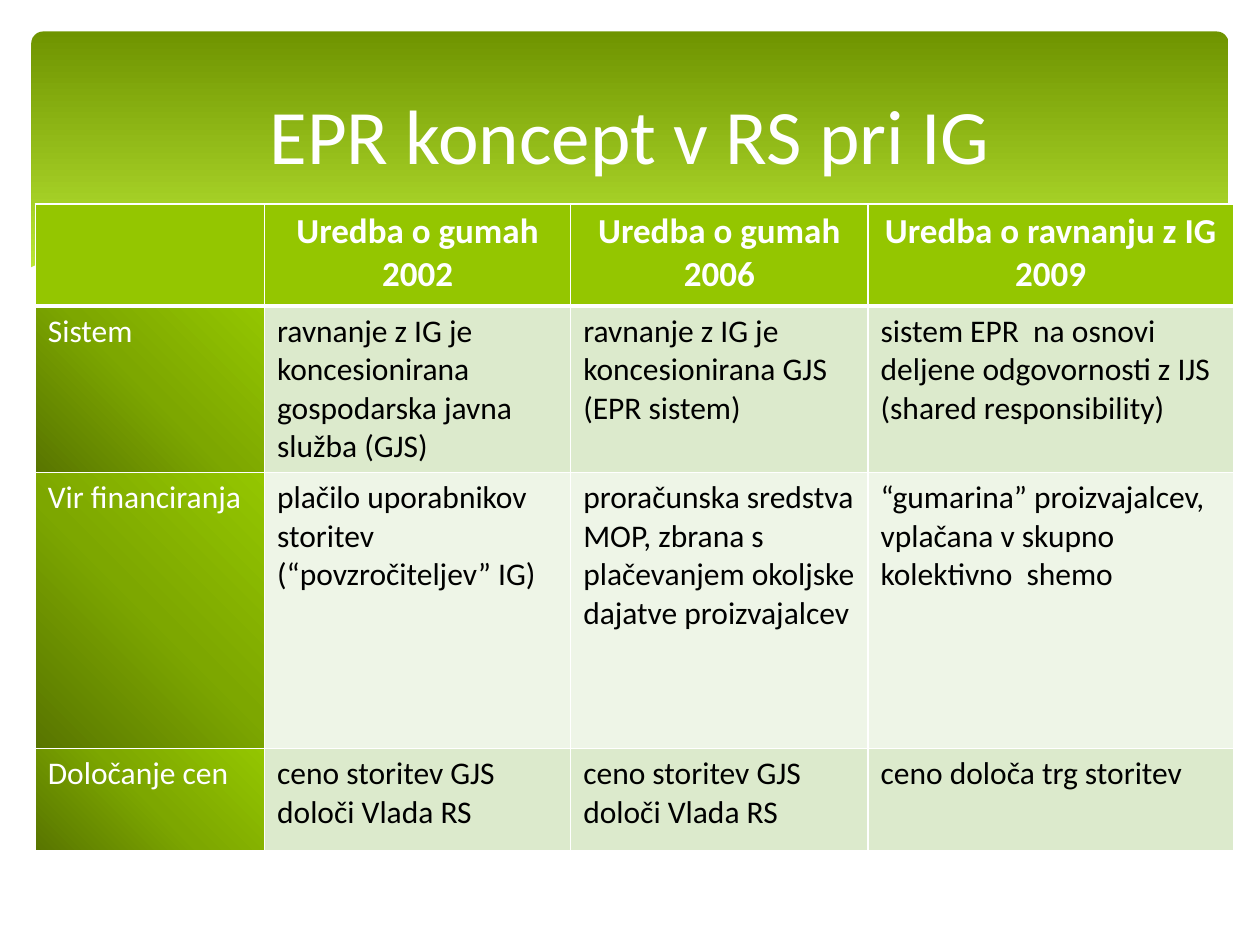
from lxml import etree
from pptx import Presentation
from pptx import util as u
from pptx.dml.color import RGBColor
from pptx.enum import shapes, text
from pptx.oxml.ns import qn

THEME = {
    "font": "Calibri", "title": 44, "head": 20, "body": 18,
    "white": "FFFFFF", "black": "000000", "green": "94C600", "mist": "CAF278",
    "bands": ["DCEACC", "EEF5E7"],
    "banner": [(0, "6F9400"), (90, "D0FF44")],
    "label": [(0, "587500"), (50, "7DA700"), (100, "94C600")],
}


def set_gradient(fill, props, stops, angle):
    """Fill with (percent, colour) stops; angle runs anticlockwise."""
    fill.gradient()
    fill.gradient_angle = angle
    gs_list = props.find(qn("a:gradFill")).find(qn("a:gsLst"))
    for gs in list(gs_list):
        gs_list.remove(gs)
    for pos, color in stops:
        gs = etree.SubElement(gs_list, qn("a:gs"), pos=str(pos * 1000))
        etree.SubElement(gs, qn("a:srgbClr"), val=color)


def write(tf, content, size, color, bold=False, align=None):
    tf.text = content
    for p in tf.paragraphs:
        p.alignment = align
        values = {"name": THEME["font"], "size": u.Pt(size), "bold": bold}
        for name, value in values.items():
            setattr(p.font, name, value)
        p.font.color.rgb = RGBColor.from_string(color)


prs = Presentation()
prs.slide_width, prs.slide_height = u.Inches(10), u.Inches(7.5)
W, H = prs.slide_width, prs.slide_height
s = prs.slides.add_slide(prs.slide_layouts[5])
center = text.PP_ALIGN.CENTER

# Banner
margin = int(W * 0.025)
banner = s.shapes.add_shape(shapes.MSO_SHAPE.ROUNDED_RECTANGLE,
                            margin, margin, W - 2 * margin, int(H * 0.36))
banner.adjustments[0] = 0.034
banner.shadow.inherit = False
banner.line.fill.background()
set_gradient(banner.fill, banner._element.spPr, THEME["banner"], 270)

# Waves across the foot of the banner: points, fill, opacity in percent
waves = [
    ([(9.76, 2), (9.21, 2.1), (8.61, 2.23), (7.79, 2.42), (6.61, 2.65),
      (7.19, 2.72), (7.81, 2.77), (8.44, 2.77), (8.97, 2.7), (9.42, 2.59),
      (9.76, 2.47)], "mist", 29),
    ([(8.93, 2.73), (8.07, 2.6), (7.41, 2.47), (6.29, 2.22), (5.55, 2.05),
      (4.89, 1.94), (4.2, 1.87), (3.61, 1.85), (2.86, 1.91), (3.62, 2.03),
      (4.49, 2.22), (5.66, 2.48), (6.5, 2.64), (7.22, 2.74), (7.96, 2.78),
      (8.48, 2.77)], "mist", 40),
    ([(3.09, 1.95), (3.53, 1.89), (4.16, 1.87), (4.89, 1.9), (5.56, 1.97),
      (6.36, 2.08), (7.27, 2.26), (8.31, 2.51), (9.07, 2.72)], None, 100),
    ([(6.13, 2.57), (6.95, 2.35), (7.76, 2.16), (8.66, 1.99), (9.24, 1.9),
      (9.75, 1.85)], None, 100),
    ([(9.77, 2.46), (9.3, 2.62), (8.75, 2.73), (8.09, 2.77), (7.26, 2.72),
      (6.48, 2.62), (5.55, 2.45), (4.47, 2.2), (3.65, 2.02), (2.92, 1.9),
      (2.3, 1.85), (1.77, 1.84), (1.19, 1.87), (0.76, 1.95), (0.4, 2.05),
      (0.23, 2.13), (0.23, 3.29), (9.77, 3.29)], "white", 100),
]
for points, color, opacity in waves:
    (x, y), *rest = [(u.Inches(px), u.Inches(py)) for px, py in points]
    builder = s.shapes.build_freeform(x, y)
    builder.add_line_segments(rest, close=color is not None)
    sp = builder.convert_to_shape()
    sp.shadow.inherit = False
    if color is None:
        sp.fill.background()
        sp.line.color.rgb = RGBColor.from_string(THEME["white"])
        sp.line.width = u.Pt(0)
        continue
    sp.line.fill.background()
    sp.fill.solid()
    sp.fill.fore_color.rgb = RGBColor.from_string(THEME[color])
    if opacity < 100:
        clr = sp._element.spPr.find(qn("a:solidFill"))[0]
        etree.SubElement(clr, qn("a:alpha"), val=str(opacity * 1000))

# Title, brought in front of the banner
title = s.shapes.title
title.left, title.top = int(W * 0.05), int(H * 0.05)
title.width, title.height = int(W * 0.9), int(H * 0.183)
title.text_frame.vertical_anchor = text.MSO_ANCHOR.MIDDLE
write(title.text_frame, "EPR koncept v RS pri IG", THEME["title"],
      THEME["white"], align=center)
s.shapes._spTree.append(title._element)

# Table
rows = [
    ["", "Uredba o gumah\n2002", "Uredba o gumah 2006",
     "Uredba o ravnanju z IG 2009"],
    ["Sistem",
     "ravnanje z IG je koncesionirana gospodarska javna služba (GJS)",
     "ravnanje z IG je koncesionirana GJS (EPR sistem)",
     "sistem EPR  na osnovi deljene odgovornosti z IJS (shared responsibility)"],
    ["Vir financiranja",
     "plačilo uporabnikov storitev (“povzročiteljev” IG)",
     "proračunska sredstva MOP, zbrana s plačevanjem okoljske dajatve proizvajalcev",
     "“gumarina” proizvajalcev, vplačana v skupno kolektivno  shemo"],
    ["Določanje cen"] + ["ceno storitev GJS določi Vlada RS"] * 2
    + ["ceno določa trg storitev"],
]
col_widths = [1.82, 2.43, 2.36, 2.9]
row_heights = [0.81, 1.15, 2.19, 0.81]
table = s.shapes.add_table(
    len(rows), len(col_widths), u.Inches(0.28), u.Inches(1.62),
    u.Inches(sum(col_widths)), u.Inches(sum(row_heights))).table
for col, width in zip(table.columns, col_widths):
    col.width = u.Inches(width)
for row, height in zip(table.rows, row_heights):
    row.height = u.Inches(height)

for i, row in enumerate(rows):
    for j, content in enumerate(row):
        cell = table.cell(i, j)
        head, label = i == 0, j == 0
        write(cell.text_frame, content, THEME["head" if head else "body"],
              THEME["white" if head or label else "black"],
              bold=head, align=center if head else None)
        props = cell._tc.get_or_add_tcPr()
        if label and not head:
            set_gradient(cell.fill, props, THEME["label"], 45)
        else:
            color = THEME["green"] if head else THEME["bands"][(i - 1) % 2]
            cell.fill.solid()
            cell.fill.fore_color.rgb = RGBColor.from_string(color)
        for k, side in enumerate(["lnL", "lnR", "lnT", "lnB"]):
            thick = (head and side == "lnB") or (i == 1 and side == "lnT")
            ln = etree.Element(qn("a:" + side), w=str(u.Pt(3 if thick else 1)))
            line_fill = etree.SubElement(ln, qn("a:solidFill"))
            etree.SubElement(line_fill, qn("a:srgbClr"), val=THEME["white"])
            props.insert(k, ln)

prs.save("out.pptx")
